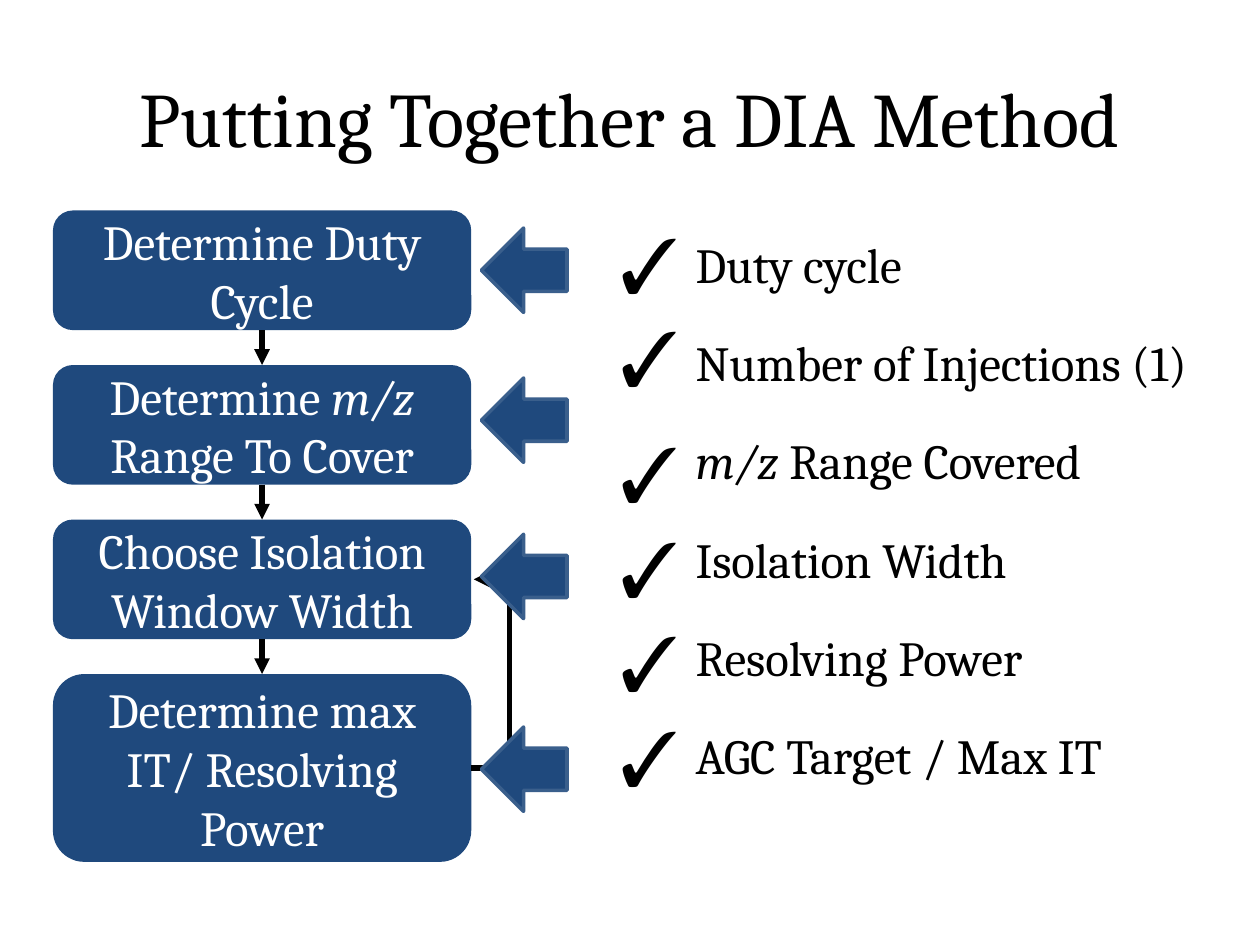
from dataclasses import dataclass

from lxml.etree import SubElement
from pptx import Presentation
from pptx.dml.color import RGBColor
from pptx.enum.shapes import MSO_CONNECTOR, MSO_SHAPE
from pptx.enum.text import MSO_ANCHOR, MSO_AUTO_SIZE, PP_ALIGN
from pptx.oxml.ns import qn
from pptx.util import Inches, Pt


@dataclass(frozen=True)
class Theme:
    font: str = "Cambria"
    ink: RGBColor = RGBColor(0x00, 0x00, 0x00)
    paper: RGBColor = RGBColor(0xFF, 0xFF, 0xFF)
    navy: RGBColor = RGBColor(0x1F, 0x49, 0x7D)
    edge: RGBColor = RGBColor(0x3A, 0x5F, 0x8C)
    large: int = 44
    normal: int = 28
    link_width: int = 3
    edge_width: int = 2


@dataclass(frozen=True)
class Step:
    text: str
    height: float
    arrow_top: float


@dataclass(frozen=True)
class Item:
    text: str
    check_top: float


THEME = Theme()
WIDTH, HEIGHT = Inches(10), Inches(7.5)
COLUMNS, ROWS = 10, 7.5

# Steps share one pitch; underscores enclose italic words
FIRST_TOP, PITCH = 1.67, 3.68 / 3
STEP_LEFT, STEP_WIDTH = 0.42, 3.32
STEPS = [
    Step("Determine Duty Cycle", 0.95, 1.81),
    Step("Determine _m/z_ Range To Cover", 0.95, 3.0),
    Step("Choose Isolation Window Width", 0.95, 4.24),
    Step("Determine max IT/ Resolving Power", 1.49, 5.77),
]
ITEMS = [
    Item("Duty cycle", 1.67),
    Item("Number of Injections (1)", 2.41),
    Item("_m/z_ Range Covered", 3.33),
    Item("Isolation Width", 4.08),
    Item("Resolving Power", 4.83),
    Item("AGC Target / Max IT", 5.58),
]


def across(columns: float) -> int:
    return round(WIDTH * columns / COLUMNS)


def down(rows: float) -> int:
    return round(HEIGHT * rows / ROWS)


def area(left: float, top: float, width: float, height: float) -> tuple:
    return across(left), down(top), across(width), down(height)


def write(para, text: str, *, size=THEME.normal, color=THEME.ink,
          align=None, line_spacing=None) -> None:
    """Fill a paragraph, with the words between underscores in italics."""
    para.alignment = align
    para.line_spacing = line_spacing
    for index, part in enumerate(text.split("_")):
        if part:
            span = para.add_run()
            span.text = part
            span.font.name = THEME.font
            span.font.size = Pt(size)
            span.font.color.rgb = color
            span.font.italic = index % 2 == 1


def place(shape, left: float, top: float, width: float, height: float) -> None:
    shape.left, shape.top, shape.width, shape.height = area(left, top, width, height)


def add_filled(page, kind, box_area: tuple):
    shape = page.shapes.add_shape(kind, *box_area)
    shape.shadow.inherit = False
    shape.fill.solid()
    shape.fill.fore_color.rgb = THEME.navy
    return shape


def add_step(page, row: int, step: Step):
    top = FIRST_TOP + row * PITCH
    box = add_filled(page, MSO_SHAPE.ROUNDED_RECTANGLE,
                     area(STEP_LEFT, top, STEP_WIDTH, step.height))
    box.line.fill.background()
    frame = box.text_frame
    frame.word_wrap = True
    frame.vertical_anchor = MSO_ANCHOR.MIDDLE
    write(frame.paragraphs[0], step.text, color=THEME.paper, align=PP_ALIGN.CENTER)
    return box


def add_link(page, kind, start: tuple, end: tuple):
    link = page.shapes.add_connector(kind, *start, *end)
    link.line.color.rgb = THEME.ink
    link.line.width = Pt(THEME.link_width)
    SubElement(link.line._get_or_add_ln(), qn("a:tailEnd"), type="triangle")
    SubElement(link._element.spPr, qn("a:effectLst"))
    return link


def add_loop(page, source, target) -> None:
    """Lead back from one box to another around their right-hand side."""
    start = (source.left + source.width, source.top + source.height // 2)
    end = (start[0] + across(0.02), target.top + target.height // 2)
    link = add_link(page, MSO_CONNECTOR.ELBOW, start, end)
    # The bend lies 15 connector widths to the right
    guides = link._element.spPr.find(qn("a:prstGeom")).get_or_add_avLst()
    SubElement(guides, qn("a:gd"), name="adj1", fmla="val 1500000")


def add_arrow(page, top: float) -> None:
    arrow = add_filled(page, MSO_SHAPE.LEFT_ARROW, area(3.82, top, 0.68, 0.67))
    arrow.line.color.rgb = THEME.edge
    arrow.line.width = Pt(THEME.edge_width)


def add_check(page, top: float) -> None:
    box = page.shapes.add_textbox(*area(4.83, top, 0.69, 0.84))
    box.text_frame.word_wrap = False
    box.text_frame.auto_size = MSO_AUTO_SIZE.SHAPE_TO_FIT_TEXT
    write(box.text_frame.paragraphs[0], "✓", size=THEME.large)


def fill_list(body, items: list[Item]) -> None:
    place(body, 5.42, 1.58, 4.5, 5.33)
    frame = body.text_frame
    frame.auto_size = MSO_AUTO_SIZE.NONE
    for index, item in enumerate(items):
        para = frame.add_paragraph() if index else frame.paragraphs[0]
        write(para, item.text, line_spacing=1.5)
        properties = para._p.get_or_add_pPr()
        properties.set("marL", "0")
        properties.set("indent", "0")
        SubElement(properties, qn("a:buNone"))


def main() -> None:
    deck = Presentation()
    deck.slide_width, deck.slide_height = WIDTH, HEIGHT
    page = deck.slides.add_slide(deck.slide_layouts[1])

    # Title and list
    title, body = page.placeholders
    place(title, 0.5, 0.3, 9, 1.25)
    title.text_frame.vertical_anchor = MSO_ANCHOR.MIDDLE
    write(title.text_frame.paragraphs[0], "Putting Together a DIA Method",
          size=THEME.large, align=PP_ALIGN.CENTER)
    fill_list(body, ITEMS)

    # Flow of steps
    boxes = [add_step(page, row, step) for row, step in enumerate(STEPS)]
    for upper, lower in zip(boxes, boxes[1:]):
        link = add_link(page, MSO_CONNECTOR.STRAIGHT, (0, 0), (0, 0))
        link.begin_connect(upper, 2)
        link.end_connect(lower, 0)
    add_loop(page, boxes[3], boxes[2])

    # Arrows to the steps, and check marks of the list
    for step in STEPS:
        add_arrow(page, step.arrow_top)
    for item in ITEMS:
        add_check(page, item.check_top)

    deck.save("out.pptx")


if __name__ == "__main__":
    main()
